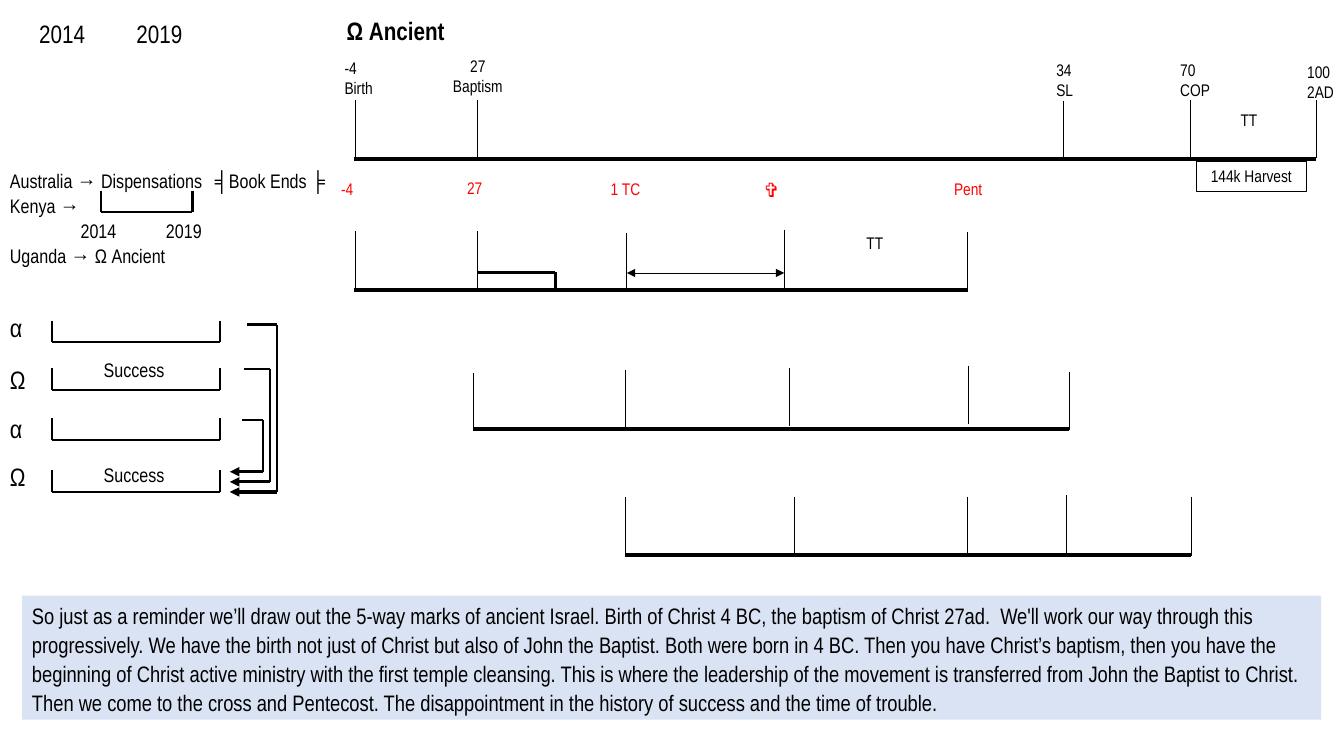
from lxml import etree
from pptx import Presentation
from pptx.dml.color import RGBColor
from pptx.enum import shapes, text
from pptx.oxml.ns import qn
from pptx.util import Pt

COLORS = {"ink": "000000", "red": "FF0000", "panel": "DAE3F3"}
FONT = "Arial Narrow"
LEFT, CENTER = text.PP_ALIGN.LEFT, text.PP_ALIGN.CENTER

# ---- Content (all lengths in points) ----
REMINDER = (
    "So just as a reminder we’ll draw out the 5-way marks of ancient Israel. "
    "Birth of Christ 4 BC, the baptism of Christ 27ad.  We'll work our way through this "
    "progressively. We have the birth not just of Christ but also of John the Baptist. "
    "Both were born in 4 BC. Then you have Christ’s baptism, then you have the beginning "
    "of Christ active ministry with the first temple cleansing. This is where the leadership "
    "of the movement is transferred from John the Baptist to Christ. Then we come to the "
    "cross and Pentecost. The disappointment in the history of success and the time of trouble."
)

# Lines of the country list, each with its tab stops
COUNTRIES = [
    ("Australia → Dispensations\t╡Book Ends ╞", [146.5]),
    ("Kenya →", []),
    ("\t2014\t2019", [50.5, 111.5]),
    ("Uganda → Ω Ancient", []),
]

# Baseline start, end, y, then way marks as (x, top)
TIMELINES = [
    (252.7, 940.3, 113.8,
     [(254.2, 71.3), (341.3, 71.3), (759.6, 72), (850.3, 71.3), (940.3, 71.3)]),
    (252.7, 691.2, 207.2,
     [(254.2, 165), (341.3, 165), (447.8, 166.3), (560.2, 164.2), (691.2, 165.6)]),
    (338.4, 763.9, 306.7,
     [(338.4, 266.4), (447.1, 264.2), (563.8, 262.8), (691.9, 261.4), (763.9, 265.7)]),
    (446.4, 851, 396.7,
     [(447.1, 355), (567.4, 355), (691.2, 355), (761.8, 353.5), (851, 355)]),
]
MARK_HEIGHT = 41.8

# Text, left, top, width, alignment
MARK_LABELS = [
    ("-4\nBirth", 239, 37.4, 54, LEFT),
    ("27\nBaptism", 315.4, 36, 51.8, CENTER),
    ("34\nSL", 747.4, 38.9, 35.3, LEFT),
    ("70\nCOP", 835.9, 38.9, 40.3, LEFT),
    ("100\n2AD", 926.6, 40.3, 35.3, LEFT),
    ("TT", 599, 162.7, 51.8, CENTER),
    ("TT", 866.2, 74.9, 51.8, CENTER),
]

# Text, centre, top, size, bold
RED_LABELS = [
    ("-4", 248, 123.8, 12, False),
    ("27", 339.1, 123.1, 12, False),
    ("1 TC", 446.8, 123.8, 12, False),
    ("✞", 551.2, 123.8, 14, True),
    ("Pent", 691.6, 123.8, 12, False),
]

# Letter, letter top, bracket top, top of the success note
HISTORIES = [
    ("α", 219.6, 229, None),
    ("Ω", 257, 262.8, 250.6),
    ("α", 291.6, 298.8, None),
    ("Ω", 326.2, 335.6, 326.2),
]

# Hook start x, turn x, start y, end y
HOOKS = [
    (176.4, 198, 231.8, 351.4),
    (174.2, 193, 263.5, 344.2),
    (172.8, 187.9, 300.2, 337),
]
HOOK_TIP = 164.2

deck = Presentation()
deck.slide_width, deck.slide_height = Pt(960), Pt(540)
page = deck.slides.add_slide(deck.slide_layouts[6])


def rgb(name):
    return RGBColor.from_string(COLORS[name])


def write(shape, words, size, color="ink", bold=False, align=LEFT, spacing=1.0):
    frame = shape.text_frame
    frame.word_wrap = True
    frame.auto_size = text.MSO_AUTO_SIZE.SHAPE_TO_FIT_TEXT
    frame.vertical_anchor = text.MSO_ANCHOR.TOP
    frame.text = words
    for para in frame.paragraphs:
        para.alignment = align
        para.line_spacing = spacing
        for span in para.runs:
            span.font.name, span.font.size, span.font.bold = FONT, Pt(size), bold
            span.font.color.rgb = rgb(color)
    return frame


def label(words, left, top, width, height, size, **style):
    box = page.shapes.add_textbox(Pt(left), Pt(top), Pt(width), Pt(height))
    return write(box, words, size, **style)


def rectangle(left, top, width, height):
    box = page.shapes.add_shape(shapes.MSO_SHAPE.RECTANGLE,
                                Pt(left), Pt(top), Pt(width), Pt(height))
    box.shadow.inherit = False
    return box


def set_tabs(para, stops):
    tabs = etree.SubElement(para._p.get_or_add_pPr(), qn("a:tabLst"))
    for stop in stops:
        etree.SubElement(tabs, qn("a:tab"), pos=str(Pt(stop)), algn="l")


def line(x1, y1, x2, y2, weight, arrows=()):
    link = page.shapes.add_connector(shapes.MSO_CONNECTOR.STRAIGHT,
                                     Pt(x1), Pt(y1), Pt(x2), Pt(y2))
    link.line.color.rgb = rgb("ink")
    link.line.width = Pt(weight)
    for end in arrows:
        etree.SubElement(link.line._get_or_add_ln(), qn("a:" + end), type="triangle")
    etree.SubElement(link._element.spPr, qn("a:effectLst"))


def bracket(left, right, top):
    bottom = top + 15.6
    for x in (left, right):
        line(x, top, x, bottom, 1.5)
    line(left, bottom, right, bottom, 1.5)


# ---- Reminder panel ----
panel = rectangle(15.8, 425.5, 928, 88.6)
panel.fill.solid()
panel.fill.fore_color.rgb = rgb("panel")
panel.line.fill.background()
write(panel, REMINDER, 16, spacing=1.07)

# ---- Headings and country list ----
years = label("2014\t2019", 20.9, 7.9, 127.4, 28.8, 18, spacing=1.07)
set_tabs(years.paragraphs[0], [69.5])
label("Ω Ancient", 240.5, 7.2, 128.2, 28.8, 18, bold=True)
countries = label("\n".join(words for words, _ in COUNTRIES),
                  0, 115.9, 247.7, 78.5, 14, spacing=1.07)
for para, (_, stops) in zip(countries.paragraphs, COUNTRIES):
    if stops:
        set_tabs(para, stops)
bracket(72, 137.5, 136.1)

# ---- Alpha and omega histories ----
for letter, letter_top, bracket_top, note_top in HISTORIES:
    label(letter, 0, letter_top, 24.5, 28.8, 18)
    bracket(37.4, 157, bracket_top)
    if note_top:
        label("Success", 67, note_top, 59.8, 23.8, 14, spacing=1.07)
for start, turn, y1, y2 in HOOKS:
    line(start, y1, turn, y1, 1.5)
    line(turn, y2, turn, y1, 1.5)
    line(turn, y2, HOOK_TIP, y2, 2.25, ["tailEnd"])

# ---- Timelines ----
for start, end, y, marks in TIMELINES:
    line(start, y, end, y, 3)
    for x, top in marks:
        line(x, top, x, top + MARK_HEIGHT, 0.75)

# ---- Way mark labels ----
for words, left, top, width, align in MARK_LABELS:
    height = 36 if "\n" in words else 21.6
    label(words, left, top, width, height, 12, align=align)
for words, middle, top, size, bold in RED_LABELS:
    label(words, middle - 18.4, top, 36.8, 36, size, color="red", bold=bold, align=CENTER)

# ---- Harvest box ----
harvest = rectangle(854.6, 115.2, 78.5, 21.6)
harvest.fill.background()
harvest.line.color.rgb = rgb("ink")
harvest.line.width = Pt(0.75)
write(harvest, "144k Harvest", 12, align=CENTER)

# ---- Spans on the second timeline ----
line(341.3, 194.4, 396.7, 194.4, 2.25)
line(396.7, 194.4, 396.7, 208, 2.25)
line(447.8, 195, 560.2, 195, 0.5, ["headEnd", "tailEnd"])

deck.save("out.pptx")
